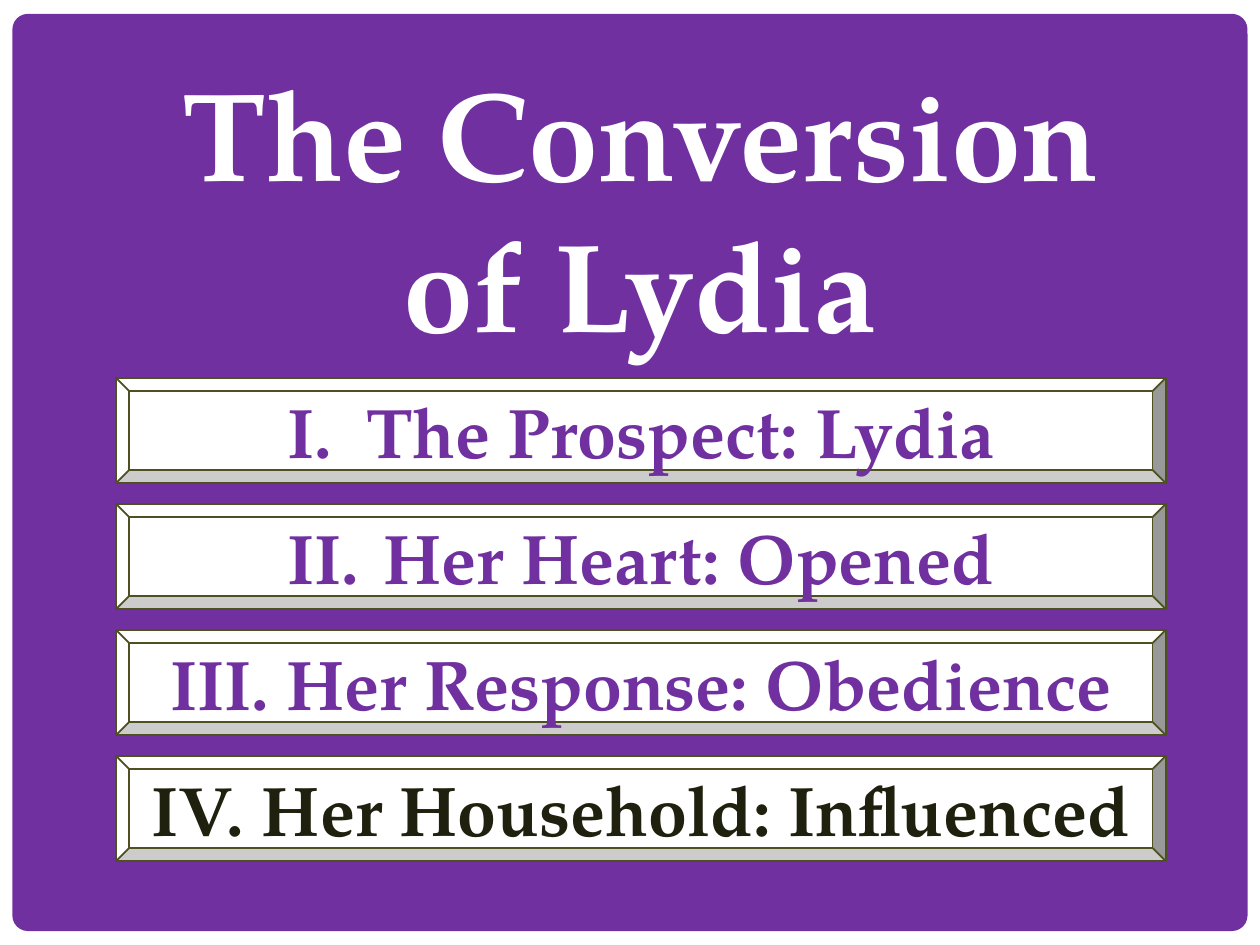
from pptx import Presentation
from pptx.dml.color import RGBColor
from pptx.enum.shapes import MSO_SHAPE as Shape
from pptx.enum.text import MSO_ANCHOR as Anchor, MSO_AUTO_SIZE as Fit, PP_ALIGN as Align
from pptx.util import Cm, Pt
from lxml.etree import SubElement
from pptx.oxml.ns import qn

FONT = "TeX Gyre Pagella"
PURPLE, WHITE, OLIVE, DARK = "7030A0", "FFFFFF", "4E501F", "1F200D"
POINTS = [
    ("The Prospect: Lydia", PURPLE),
    (" Her Heart: Opened", PURPLE),
    (" Her Response: Obedience", PURPLE),
    (" Her Household: Influenced", DARK),
]


def color(code):
    return RGBColor.from_string(code)


def add_box(slide, kind, box, fill, line=None):
    shape = slide.shapes.add_shape(kind, *map(Cm, box))
    shape.shadow.inherit = False
    shape.fill.solid()
    shape.fill.fore_color.rgb = color(fill)
    if line:
        shape.line.color.rgb = color(line)
        shape.line.width = Pt(1)
    else:
        shape.line.fill.background()
    return shape


def style(para, size, code):
    para.alignment = Align.CENTER
    for run in para.runs:
        font = run.font
        font.name, font.size, font.bold = FONT, Pt(size), True
        font.color.rgb = color(code)


def number(para, start):
    """Give the paragraph a Roman numeral with a hanging indent."""
    props = para._p.get_or_add_pPr()
    hang = Cm(1.59)
    props.set("marL", str(hang))
    props.set("indent", str(-hang))
    mark = SubElement(props, qn("a:buAutoNum"), type="romanUcPeriod")
    if start > 1:
        mark.set("startAt", str(start))


def add_frame(slide, box):
    left, top, width, height = box
    add_box(slide, Shape.RECTANGLE, box, WHITE)
    inner = left + 0.25, top + 0.28, width - 0.5, height - 0.56
    panel = add_box(slide, Shape.ROUNDED_RECTANGLE, inner, PURPLE)
    panel.adjustments[0] = 0.017


def add_title(slide, box, lines):
    frame = slide.shapes.add_textbox(*map(Cm, box)).text_frame
    frame.text = "\n".join(lines)
    frame.word_wrap = False
    frame.auto_size = Fit.SHAPE_TO_FIT_TEXT
    for para in frame.paragraphs:
        style(para, 72, WHITE)


def add_points(slide, box, points, gap):
    left, top, width, height = box
    tall = (height + gap) / len(points) - gap
    for i, (text, code) in enumerate(points):
        place = left, top + i * (tall + gap), width, tall
        bar = add_box(slide, Shape.BEVEL, place, WHITE, OLIVE)
        frame = bar.text_frame
        frame.text = text
        frame.vertical_anchor = Anchor.MIDDLE
        para = frame.paragraphs[0]
        style(para, 40, code)
        number(para, i + 1)


def main():
    deck = Presentation()
    deck.slide_width, deck.slide_height = Cm(25.4), Cm(19.05)
    slide = deck.slides.add_slide(deck.slide_layouts[6])
    back = slide.background.fill
    back.solid()
    back.fore_color.rgb = color(PURPLE)
    add_frame(slide, (0, 0, 25.4, 19.05))
    add_title(slide, (3.28, 0.99, 19.25, 6.4), ["The Conversion", "of Lydia"])
    add_points(slide, (2.34, 7.62, 21.16, 9.74), POINTS, 0.42)
    deck.save("out.pptx")


if __name__ == "__main__":
    main()
